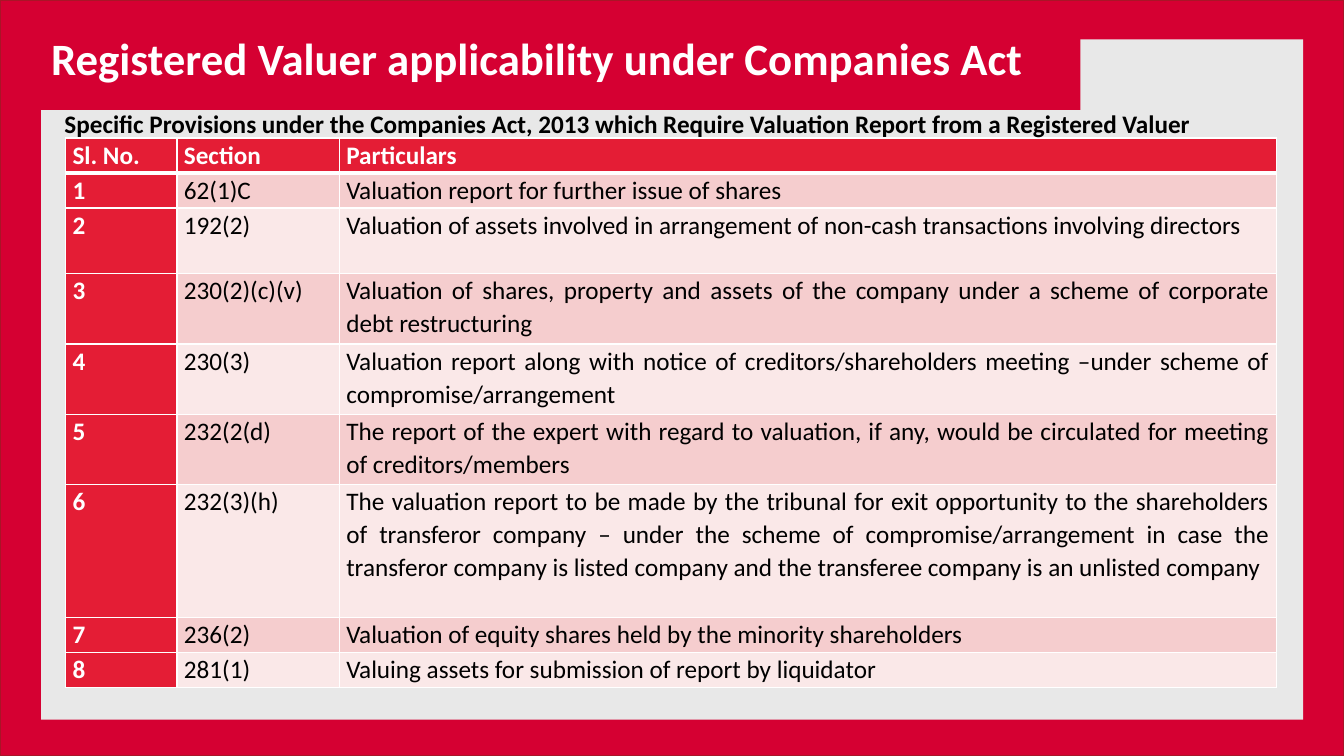
from dataclasses import dataclass

from lxml import etree
from pptx import Presentation
from pptx.dml.color import RGBColor
from pptx.enum import shapes, text
from pptx.oxml import ns
from pptx.util import Pt


@dataclass(frozen=True)
class Theme:
    font: str = "Calibri"
    title_size: int = 32
    body_size: int = 18
    frame: str = "D50032"
    frame_edge: str = "A91527"
    panel: str = "E8E8E8"
    accent: str = "E41D35"
    bands: tuple = ("F5CDCE", "FAE8E8")
    light: str = "FFFFFF"
    dark: str = "000000"


THEME = Theme()
SLIDE_SIZE = (960, 540)

TITLE = "Registered Valuer applicability under Companies Act"
SUBTITLE = ("Specific Provisions under the Companies Act, 2013 which "
            "Require Valuation Report from a Registered Valuer")
HEADINGS = ("Sl. No.", "Section", "Particulars")
PROVISIONS = [
    ("62(1)C", "Valuation report for further issue of shares"),
    ("192(2)", "Valuation of assets involved in arrangement of non-cash "
               "transactions involving directors"),
    ("230(2)(c)(v)", "Valuation of shares, property and assets of the company "
                     "under a scheme of corporate debt restructuring"),
    ("230(3)", "Valuation report along with notice of creditors/shareholders "
               "meeting –under scheme of compromise/arrangement"),
    ("232(2(d)", "The report of the expert with regard to valuation, if any, "
                 "would be circulated for meeting of creditors/members"),
    ("232(3)(h)", "The valuation report to be made by the tribunal for exit "
                  "opportunity to the shareholders of transferor company – under "
                  "the scheme of compromise/arrangement in case the transferor "
                  "company is listed company and the transferee company is an "
                  "unlisted company"),
    ("236(2)", "Valuation of equity shares held by the minority shareholders"),
    ("281(1)", "Valuing assets for submission of report by liquidator"),
]
COLUMN_WIDTHS = (79.6, 116, 669.4)
ROW_HEIGHTS = (25, 25, 47, 50.2, 50.2, 50.2, 95, 25, 25)


def color(value):
    return RGBColor.from_string(value)


def write(frame, words, size, ink, bold, align):
    frame.text = words
    paragraph = frame.paragraphs[0]
    paragraph.alignment = align
    for run in paragraph.runs:
        run.font.name = THEME.font
        run.font.size = Pt(size)
        run.font.bold = bold
        run.font.color.rgb = color(ink)
    return paragraph


def fill_solid(item, value):
    item.fill.solid()
    item.fill.fore_color.rgb = color(value)


def add_panel(slide, box, fill, edge=None):
    panel = slide.shapes.add_shape(shapes.MSO_SHAPE.RECTANGLE, *map(Pt, box))
    panel.shadow.inherit = False
    fill_solid(panel, fill)
    if edge:
        panel.line.color.rgb = color(edge)
        panel.line.width = Pt(1)
    else:
        panel.line.fill.background()


def add_title(slide, box):
    title = slide.shapes.title
    title.left, title.top, title.width, title.height = map(Pt, box)
    # Bring the title in front of the panels
    title.element.getparent().append(title.element)
    fill_solid(title, THEME.frame)
    frame = title.text_frame
    frame.auto_size = text.MSO_AUTO_SIZE.SHAPE_TO_FIT_TEXT
    frame.vertical_anchor = text.MSO_ANCHOR.TOP
    write(frame, TITLE, THEME.title_size, THEME.light, True, text.PP_ALIGN.LEFT)


def add_subtitle(slide, box):
    frame = slide.shapes.add_textbox(*map(Pt, box)).text_frame
    frame.word_wrap = True
    frame.auto_size = text.MSO_AUTO_SIZE.SHAPE_TO_FIT_TEXT
    frame.vertical_anchor = text.MSO_ANCHOR.MIDDLE
    write(frame, SUBTITLE, THEME.body_size, THEME.dark, True, text.PP_ALIGN.JUSTIFY)


def add_borders(cell, widths):
    properties = cell._tc.get_or_add_tcPr()
    for side, width in zip("LRTB", widths):
        line = etree.SubElement(properties, ns.qn(f"a:ln{side}"), w=str(Pt(width)))
        solid = etree.SubElement(line, ns.qn("a:solidFill"))
        etree.SubElement(solid, ns.qn("a:srgbClr"), val=THEME.light)


def format_cell(cell, words, row, column):
    strong = row == 0 or column == 0
    top, bottom = (3 if row == 1 else 1), (3 if row == 0 else 1)
    add_borders(cell, (1, 1, top, bottom))
    fill_solid(cell, THEME.accent if strong else THEME.bands[(row - 1) % 2])
    cell.margin_left = cell.margin_right = Pt(5)
    cell.margin_top = cell.margin_bottom = 0
    paragraph = write(cell.text_frame, words, THEME.body_size,
                      THEME.light if strong else THEME.dark, strong,
                      text.PP_ALIGN.JUSTIFY)
    paragraph.line_spacing = 1.07
    paragraph.space_before = paragraph.space_after = Pt(1)


def add_provisions(slide, left, top):
    rows = [HEADINGS] + [(str(number), *provision)
                         for number, provision in enumerate(PROVISIONS, 1)]
    box = (left, top, sum(COLUMN_WIDTHS), sum(ROW_HEIGHTS))
    table = slide.shapes.add_table(len(rows), len(HEADINGS), *map(Pt, box)).table
    for column, width in zip(table.columns, COLUMN_WIDTHS):
        column.width = Pt(width)
    for row, height in zip(table.rows, ROW_HEIGHTS):
        row.height = Pt(height)
    for r, row in enumerate(rows):
        for c, words in enumerate(row):
            format_cell(table.cell(r, c), words, r, c)


def build_slide(deck):
    slide = deck.slides.add_slide(deck.slide_layouts[5])
    # Red frame and grey panel
    add_panel(slide, (0, 0, *SLIDE_SIZE), THEME.frame, THEME.frame_edge)
    add_panel(slide, (29.3, 28.2, 901.5, 485.8), THEME.panel)
    # Title band
    add_title(slide, (29.3, 18.4, 742.5, 46))
    # Table of provisions and its heading
    add_provisions(slide, 46.8, 98.6)
    add_subtitle(slide, (39, 73.8, 880.6, 29))


def main():
    deck = Presentation()
    deck.slide_width, deck.slide_height = map(Pt, SLIDE_SIZE)
    build_slide(deck)
    deck.save("out.pptx")


if __name__ == "__main__":
    main()
